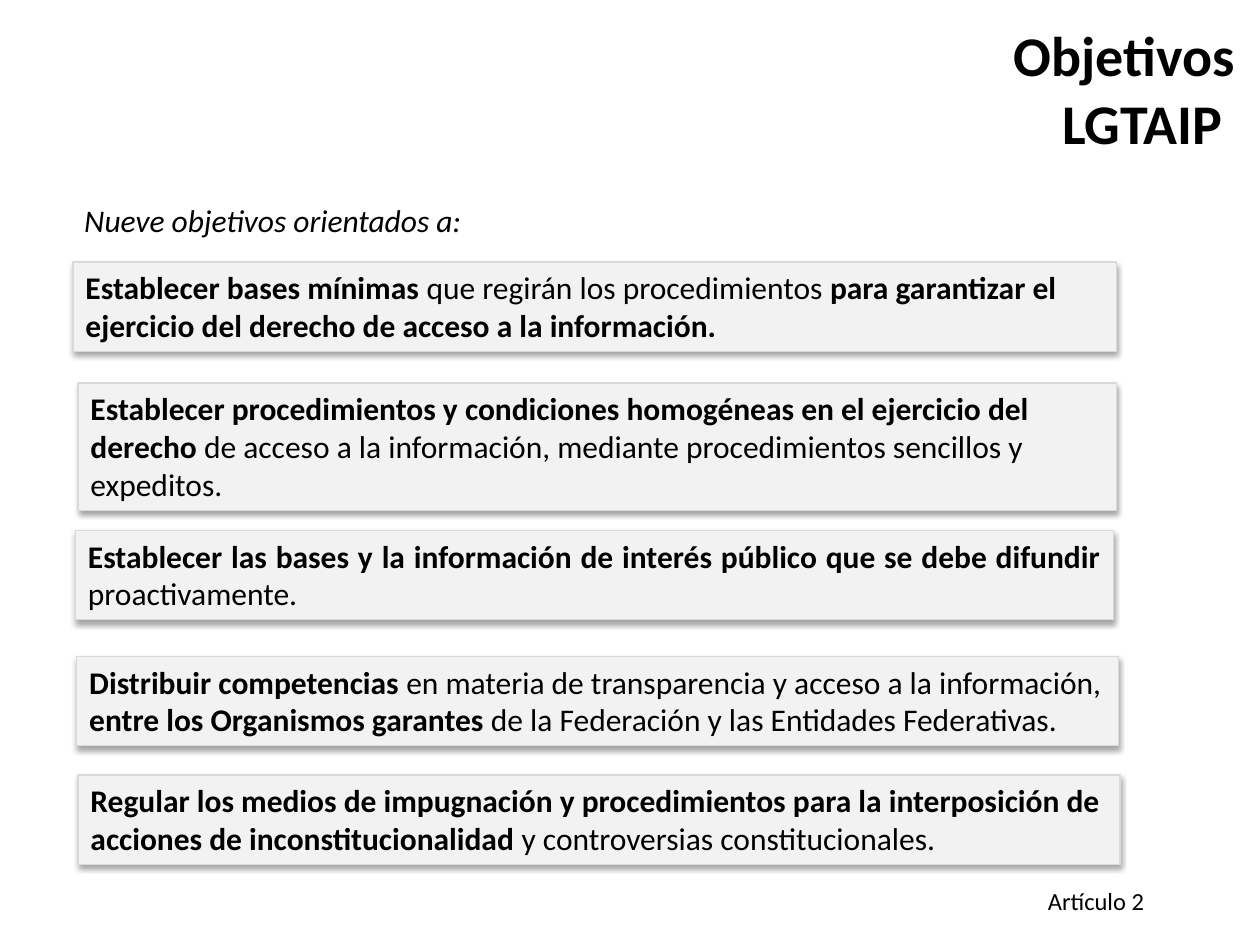
from lxml import etree
from pptx import Presentation
from pptx.dml.color import RGBColor
from pptx.enum.shapes import MSO_SHAPE
from pptx.enum.text import MSO_ANCHOR, MSO_AUTO_SIZE, PP_ALIGN
from pptx.oxml import parse_xml
from pptx.util import Inches, Pt

RECT = MSO_SHAPE.RECTANGLE
TOP, MIDDLE = MSO_ANCHOR.TOP, MSO_ANCHOR.MIDDLE
LEFT, RIGHT, JUSTIFY = PP_ALIGN.LEFT, PP_ALIGN.RIGHT, PP_ALIGN.JUSTIFY
GROW = MSO_AUTO_SIZE.SHAPE_TO_FIT_TEXT
FONT = "Calibri"
COLORS = {"text": "000000", "fill": "F2F2F2", "line": "D9D9D9"}
SHADOW = (
    '<a:outerShdw xmlns:a="http://schemas.openxmlformats.org/drawingml/2006/main" '
    'blurRad="%d" dist="%d" dir="5400000" rotWithShape="0">'
    '<a:srgbClr val="%s"><a:alpha val="35000"/></a:srgbClr></a:outerShdw>'
    % (Pt(3.1), Pt(1.8), COLORS["text"])
)


def style(p, size, align=LEFT):
    p.alignment = align
    p.font.name = FONT
    p.font.size = Pt(size)
    p.font.color.rgb = RGBColor.from_string(COLORS["text"])


def add_text(s, box, text, size, align=LEFT, anchor=TOP):
    tf = s.shapes.add_textbox(*map(Inches, box)).text_frame
    tf.word_wrap = True
    tf.vertical_anchor = anchor
    p = tf.paragraphs[0]
    p.text = text
    style(p, size, align)
    return p


prs = Presentation()
prs.slide_width, prs.slide_height = Inches(10), Inches(7.5)
s = prs.slides.add_slide(prs.slide_layouts[6])

# Title and introduction
title = add_text(s, (4.94, 0.15, 4.96, 1.1), "Objetivos\vLGTAIP ", 32, RIGHT, MIDDLE)
title.font.bold = True
intro = add_text(s, (0.57, 1.55, 5.59, 0.4), "Nueve objetivos orientados a:", 18)
intro.font.italic = True

# Objectives: box, alignment, paragraphs of (text, bold) runs
objectives = [
    ((0.58, 2.08, 8.28, 0.71), LEFT, [[
        ("Establecer bases mínimas ", True),
        ("que regirán los procedimientos ", False),
        ("para garantizar el ejercicio del derecho de acceso a la información.", True)]]),
    ((0.62, 3.04, 8.24, 1.01), LEFT, [[
        ("Establecer procedimientos y condiciones homogéneas en el ejercicio del derecho ", True),
        ("de acceso a la información, mediante procedimientos sencillos y expeditos.", False)]]),
    ((0.6, 4.21, 8.24, 0.71), JUSTIFY, [[
        ("Establecer las bases y la información de interés público que se debe difundir ", True),
        ("proactivamente.", False)]]),
    ((0.61, 5.21, 8.27, 0.71), LEFT, [
        [("Distribuir competencias ", True),
         ("en materia de transparencia y acceso a la información,", False)],
        [("entre los Organismos garantes", True),
         (" de la Federación y las Entidades Federativas.", False)]]),
    ((0.62, 6.15, 8.27, 0.71), LEFT, [[
        ("Regular los medios de impugnación y procedimientos para la interposición de "
         "acciones de inconstitucionalidad", True),
        (" y controversias constitucionales.", False)]]),
]
for box, align, paragraphs in objectives:
    sp = s.shapes.add_shape(RECT, *map(Inches, box))
    sp.fill.solid()
    sp.fill.fore_color.rgb = RGBColor.from_string(COLORS["fill"])
    sp.line.color.rgb = RGBColor.from_string(COLORS["line"])
    sp.line.width = Pt(0.75)
    effects = etree.SubElement(sp._element.spPr, "{http://schemas.openxmlformats.org/drawingml/2006/main}effectLst")
    effects.append(parse_xml(SHADOW))
    tf = sp.text_frame
    tf.word_wrap = True
    tf.auto_size = GROW
    tf.vertical_anchor = TOP
    for i, runs in enumerate(paragraphs):
        p = tf.add_paragraph() if i else tf.paragraphs[0]
        style(p, 18, align)
        for text, bold in runs:
            r = p.add_run()
            r.text = text
            r.font.bold = bold

# Article reference
add_text(s, (7.68, 6.98, 1.5, 0.34), "Artículo 2", 14, RIGHT)

prs.save("out.pptx")
